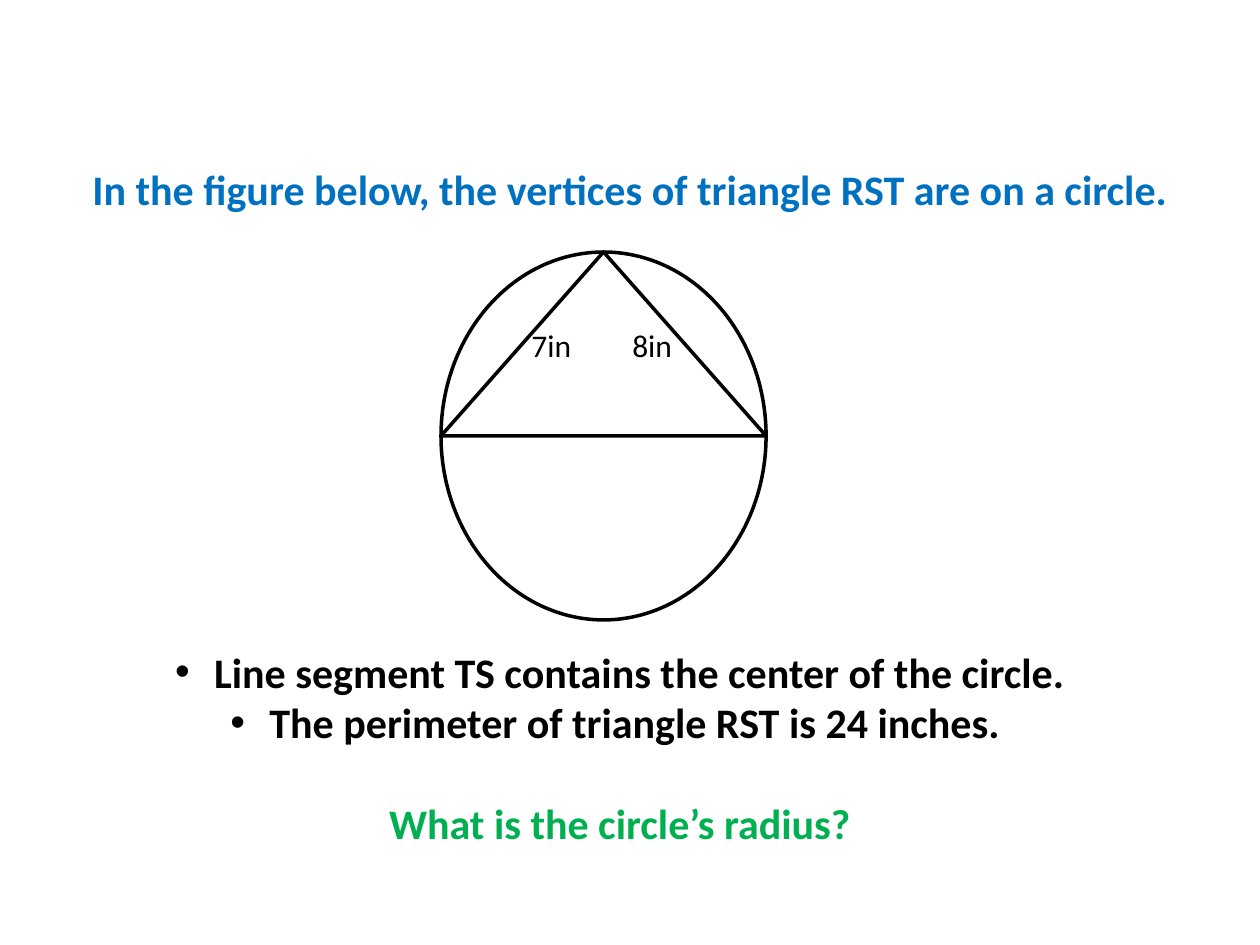
from lxml import etree
from pptx import Presentation
from pptx.dml.color import RGBColor
from pptx.enum.shapes import MSO_SHAPE
from pptx.enum.text import PP_ALIGN
from pptx.oxml.ns import qn
from pptx.util import Inches, Pt

CENTER, LEFT = PP_ALIGN.CENTER, PP_ALIGN.LEFT
CIRCLE, TRIANGLE = MSO_SHAPE.OVAL, MSO_SHAPE.FLOWCHART_EXTRACT
BLACK, BLUE, GREEN = "000000", "0070C0", "00B050"


def rgb(color):
    return RGBColor.from_string(color)


def add_text(s, box, lines, size, align=LEFT, bold=False):
    tf = s.shapes.add_textbox(*[Inches(v) for v in box]).text_frame
    tf.word_wrap = True
    for i, (text, color) in enumerate(lines):
        p = tf.add_paragraph() if i else tf.paragraphs[0]
        p.text = text
        p.alignment = align
        p.font.size = Pt(size)
        font = p.runs[0].font
        font.name, font.size, font.bold = "Calibri", Pt(size), bold
        font.color.rgb = rgb(color)
    return tf


prs = Presentation()
prs.slide_width, prs.slide_height = Inches(10), Inches(7.5)
s = prs.slides.add_slide(prs.slide_layouts[6])

# Problem statement
add_text(s, (0.5, 1.25, 9, 0.5),
         [("In the figure below, the vertices of triangle RST are on a circle.", BLUE)],
         24, CENTER, True)

# Circle with the triangle in its upper half
for kind, height in [(CIRCLE, 2.92), (TRIANGLE, 1.46)]:
    sp = s.shapes.add_shape(kind, Inches(3.5), Inches(2), Inches(2.58), Inches(height))
    sp.shadow.inherit = False
    sp.fill.background()
    sp.line.color.rgb = rgb(BLACK)
    sp.line.width = Pt(2)

# Given facts and the question
tf = add_text(s, (0.42, 5.08, 9, 1.72),
              [("Line segment TS contains the center of the circle.", BLACK),
               ("The perimeter of triangle RST is 24 inches. ", BLACK),
               ("What is the circle’s radius?", GREEN)],
              24, CENTER, True)
*facts, question = tf.paragraphs
question.space_before = Pt(29)
for p in facts:
    pPr = p._p.get_or_add_pPr()
    pPr.set("marL", str(Inches(0.31)))
    pPr.set("indent", str(Inches(-0.31)))
    bullet_font = etree.Element(qn("a:buFont"), typeface="Arial")
    bullet = etree.Element(qn("a:buChar"), char="•")
    pPr.insert(0, bullet_font)
    pPr.insert(1, bullet)

# Side lengths
for left, length in [(4.12, "7in"), (4.92, "8in")]:
    add_text(s, (left, 2.54, 0.67, 0.4), [(length, BLACK)], 18)

prs.save("out.pptx")
